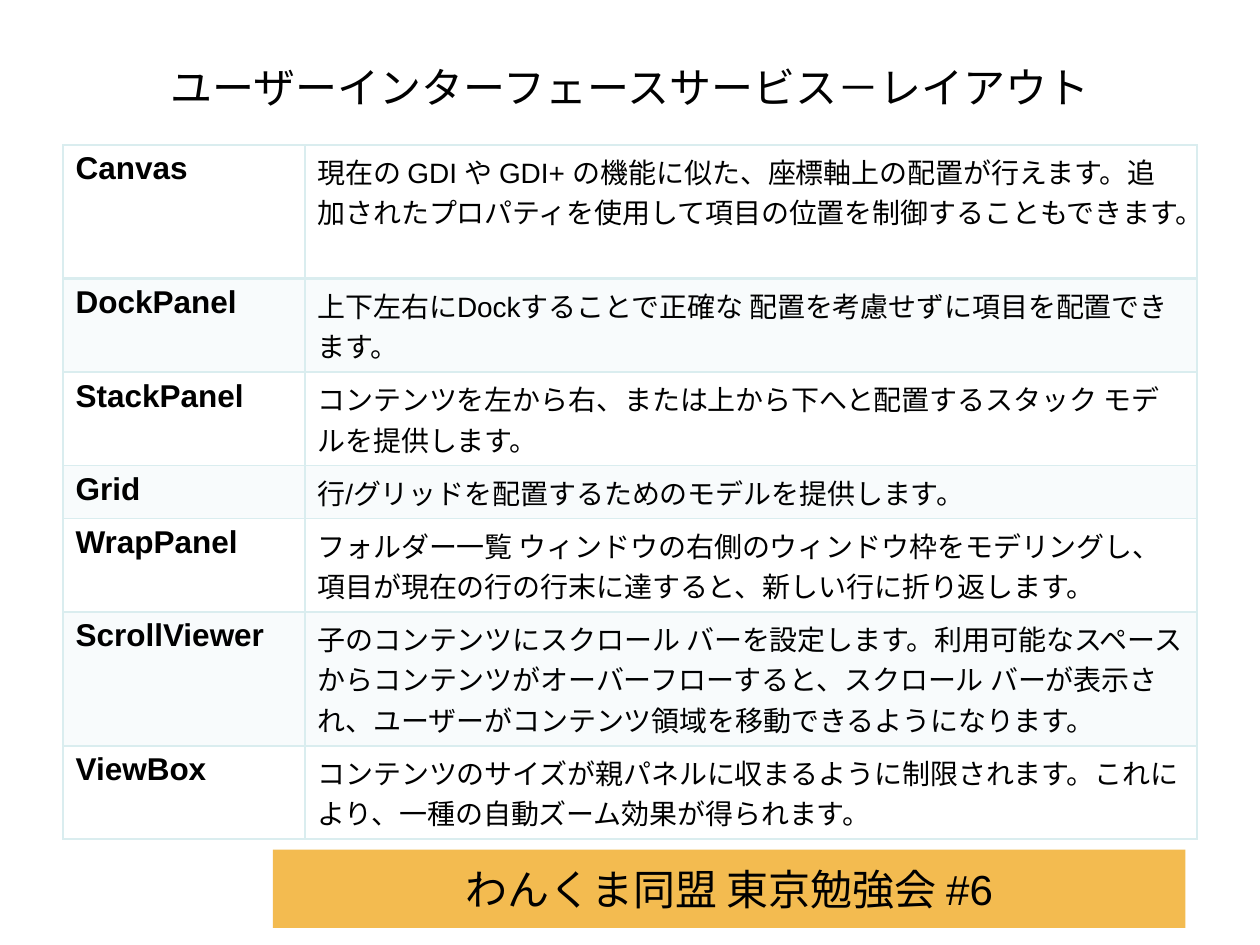
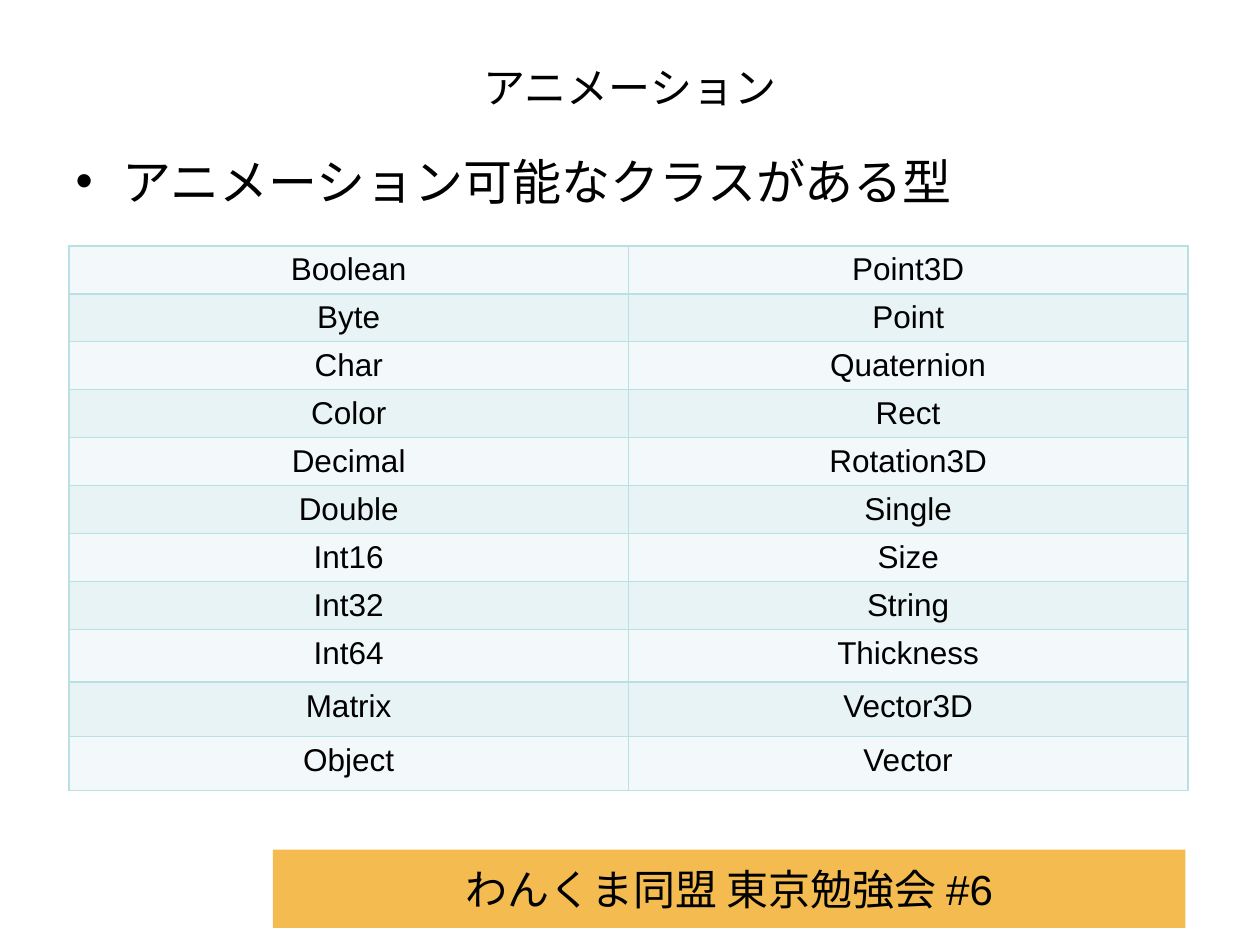
import pptx
import pptx.dml.color
import pptx.enum.lang
import pptx.enum.shapes
import pptx.enum.text
import pptx.oxml
import pptx.oxml.ns
import pptx.util

Pt = pptx.util.Pt
RGBColor = pptx.dml.color.RGBColor
ALIGN = pptx.enum.text.PP_ALIGN
ANCHOR = pptx.enum.text.MSO_ANCHOR

BLACK = RGBColor(0x00, 0x00, 0x00)
AMBER = RGBColor(0xF3, 0xBB, 0x50)
PALE_TEAL = RGBColor(0xDA, 0xED, 0xEF)
FAINT_TEAL = RGBColor(0xF8, 0xFB, 0xFC)
TEAL = RGBColor(0xBB, 0xE0, 0xE3)
LIGHT_BAND = RGBColor(0xF3, 0xF9, 0xFA)
DARK_BAND = RGBColor(0xE7, 0xF3, 0xF4)

FONT = "Arial"
FOOTER = "わんくま同盟 東京勉強会 #6"

# Panel name, description, number of lines the description takes
PANELS = [
    ("Canvas", "現在の GDI や GDI+ の機能に似た、座標軸上の配置が行えます。"
     "追加されたプロパティを使用して項目の位置を制御することもできます。", 3),
    ("DockPanel", "上下左右にDockすることで正確な 配置を考慮せずに項目を配置できます。", 2),
    ("StackPanel", "コンテンツを左から右、または上から下へと配置するスタック モデルを提供します。", 2),
    ("Grid", "行/グリッドを配置するためのモデルを提供します。", 1),
    ("WrapPanel", "フォルダー一覧 ウィンドウの右側のウィンドウ枠をモデリングし、"
     "項目が現在の行の行末に達すると、新しい行に折り返します。", 2),
    ("ScrollViewer", "子のコンテンツにスクロール バーを設定します。利用可能なスペースから"
     "コンテンツがオーバーフローすると、スクロール バーが表示され、"
     "ユーザーがコンテンツ領域を移動できるようになります。", 3),
    ("ViewBox", "コンテンツのサイズが親パネルに収まるように制限されます。"
     "これにより、一種の自動ズーム効果が得られます。", 2),
]
ANIMATABLE_TYPES = [
    ("Boolean", "Point3D"), ("Byte", "Point"), ("Char", "Quaternion"),
    ("Color", "Rect"), ("Decimal", "Rotation3D"), ("Double", "Single"),
    ("Int16", "Size"), ("Int32", "String"), ("Int64", "Thickness"),
    ("Matrix", "Vector3D"), ("Object", "Vector"),
]


def write(frame, text, size=24, bold=False, align=ALIGN.LEFT, anchor=ANCHOR.TOP, bullet=None):
    frame.word_wrap = True
    frame.vertical_anchor = anchor
    paragraph = frame.paragraphs[0]
    paragraph.alignment = align
    paragraph.space_before = Pt(0)
    if bullet:
        properties = paragraph._p.get_or_add_pPr()
        properties.set("marL", str(Pt(27)))
        properties.set("indent", str(-Pt(27)))
        properties.append(pptx.oxml.parse_xml(
            f'<a:buChar {pptx.oxml.ns.nsdecls("a")} char="{bullet}"/>'))
    run = paragraph.add_run()
    run.text = text
    run.font.name = FONT
    run.font.size = Pt(size)
    run.font.bold = bold
    run.font.color.rgb = BLACK
    run.font.language_id = pptx.enum.lang.MSO_LANGUAGE_ID.JAPANESE


def fill_placeholder(placeholder, box, text, **text_format):
    left, top, width, height = map(Pt, box)
    placeholder.left, placeholder.top = left, top
    placeholder.width, placeholder.height = width, height
    placeholder.text_frame.auto_size = pptx.enum.text.MSO_AUTO_SIZE.NONE
    write(placeholder.text_frame, text, **text_format)


def add_footer(slide):
    band = slide.shapes.add_shape(
        pptx.enum.shapes.MSO_SHAPE.RECTANGLE, Pt(155.9), Pt(485.5), Pt(521.5), Pt(44.8))
    band.shadow.inherit = False
    band.fill.solid()
    band.fill.fore_color.rgb = AMBER
    band.line.fill.background()
    write(band.text_frame, FOOTER, align=ALIGN.CENTER, anchor=ANCHOR.MIDDLE)


def add_titled_slide(deck, layout_index, title):
    slide = deck.slides.add_slide(deck.slide_layouts[layout_index])
    fill_placeholder(slide.shapes.title, (36, 21.6, 648, 55.4), title,
                     align=ALIGN.CENTER, anchor=ANCHOR.MIDDLE)
    add_footer(slide)
    return slide


def set_borders(cell, color, bottom_width=1):
    properties = cell._tc.get_or_add_tcPr()
    for side, width in (("L", 1), ("R", 1), ("T", 1), ("B", bottom_width)):
        properties.append(pptx.oxml.parse_xml(
            f'<a:ln{side} {pptx.oxml.ns.nsdecls("a")} w="{Pt(width)}">'
            f'<a:solidFill><a:srgbClr val="{color}"/></a:solidFill></a:ln{side}>'))


def add_banded_table(slide, left, top, column_widths, row_heights, rows,
                     column_formats, bands, border, first_bottom=1):
    """Bands are the fills of alternate rows; None leaves a row unfilled."""
    table = slide.shapes.add_table(
        len(rows), len(column_widths), Pt(left), Pt(top),
        Pt(sum(column_widths)), Pt(sum(row_heights))).table
    table.first_row = table.horz_banding = False
    for column, width in zip(table.columns, column_widths):
        column.width = Pt(width)
    for index, (row, height, texts) in enumerate(zip(table.rows, row_heights, rows)):
        row.height = Pt(height)
        band = bands[index % 2]
        for cell, text, text_format in zip(row.cells, texts, column_formats):
            set_borders(cell, border, 1 if index else first_bottom)
            if band is None:
                cell.fill.background()
            else:
                cell.fill.solid()
                cell.fill.fore_color.rgb = band
            write(cell.text_frame, text, **text_format)


def add_layout_slide(deck):
    slide = add_titled_slide(deck, 5, "ユーザーインターフェースサービス－レイアウト")
    add_banded_table(
        slide, 36, 82.8, (138.2, 509.8),
        [7.2 + 23.1 * lines for _, _, lines in PANELS],
        [panel[:2] for panel in PANELS],
        (dict(size=18, bold=True), dict(size=16)),
        (None, FAINT_TEAL), PALE_TEAL, first_bottom=2)


def add_animation_slide(deck):
    slide = add_titled_slide(deck, 1, "アニメーション")
    fill_placeholder(slide.placeholders[1], (36, 82.8, 648, 79.9),
                     "アニメーション可能なクラスがある型", size=28, bullet="•")
    add_banded_table(
        slide, 39.4, 140.5, (319.7, 319.7), [27.4] * 8 + [30.3, 30.9, 30.9],
        ANIMATABLE_TYPES, [dict(size=18, align=ALIGN.CENTER)] * 2,
        (LIGHT_BAND, DARK_BAND), TEAL)


def main():
    deck = pptx.Presentation()
    deck.slide_width, deck.slide_height = Pt(720), Pt(540)
    add_layout_slide(deck)
    add_animation_slide(deck)
    deck.save("out.pptx")


if __name__ == "__main__":
    main()
